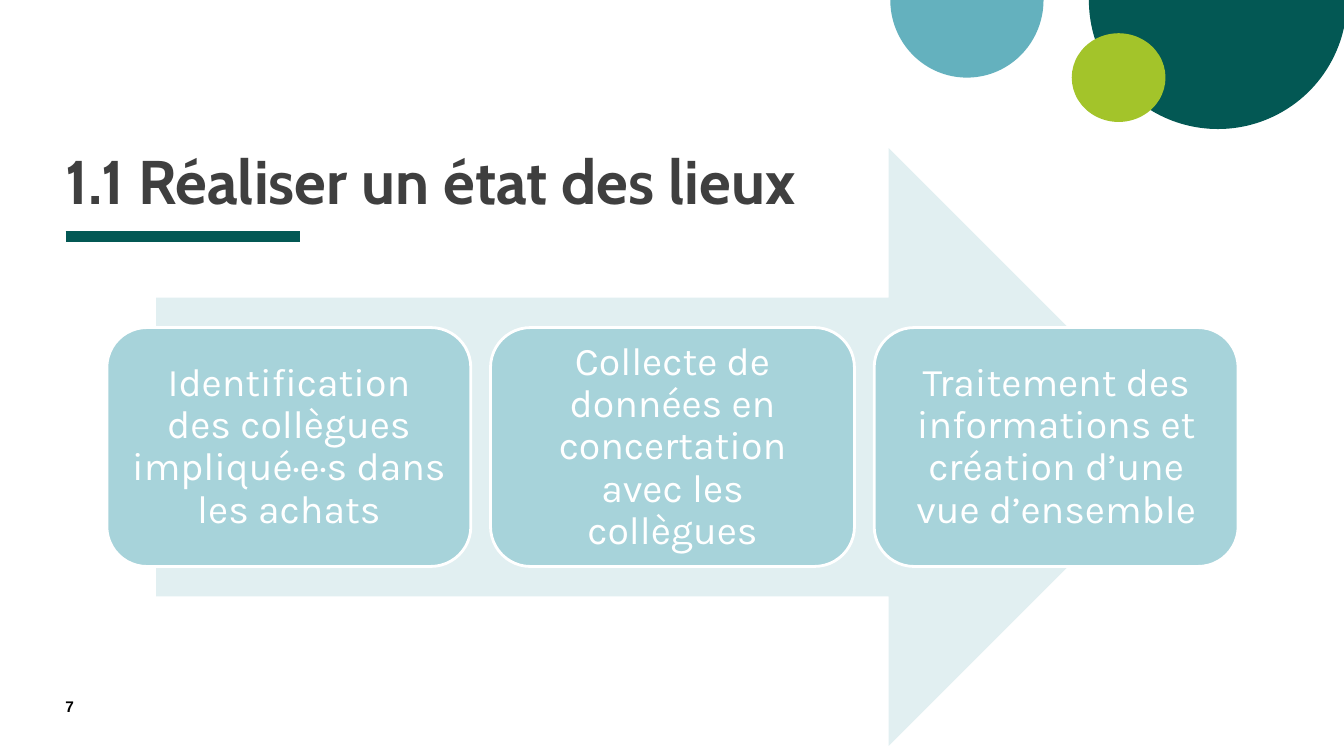
from lxml.etree import SubElement
from pptx import Presentation
from pptx.dml.color import RGBColor
from pptx.enum.shapes import MSO_CONNECTOR, MSO_SHAPE
from pptx.enum.text import MSO_ANCHOR, MSO_AUTO_SIZE, PP_ALIGN
from pptx.oxml.ns import qn
from pptx.util import Inches, Pt

TITLE = "1.1 Réaliser un état des lieux"
PAGE_NUMBER = "7"
STEPS = [
    "Identification des collègues impliqué·e·s dans les achats",
    "Collecte de données en concertation avec les collègues",
    "Traitement des informations et création d’une vue d’ensemble",
]

DARK_GREEN, BLUE, LIME = "035854", "64B1BE", "A3C42A"
PALE_BLUE, STEP_BLUE, WHITE = "E1EFF1", "A7D3DA", "FFFFFF"
GREY, BLACK = "3F3F3F", "000000"

WIDTH, HEIGHT = 13.33, 7.5
LEFT = 0.65
RULE_Y, RULE_LENGTH = 2.35, 2.33
ARROW = (1.55, 1.47, 10.23, 5.93)
STEP_LEFT, STEP_WIDTH, STEP_HEIGHT, STEP_GAP = 1.06, 3.61, 2.37, 0.195
STEP_TOP = ARROW[1] + (ARROW[3] - STEP_HEIGHT) / 2
HALF_TURN = 108  # pie angles count in units of 100000/60000 degree

# preset, (left, top, width, height), colour, adjustments
CIRCLES = [
    (MSO_SHAPE.PIE, (10.8, -1.28, 2.56, 2.56), DARK_GREEN, (0, HALF_TURN)),
    (MSO_SHAPE.PIE, (8.83, -0.77, 1.52, 1.54), BLUE, (0, HALF_TURN)),
    (MSO_SHAPE.OVAL, (10.63, 0.33, 0.93, 0.88), LIME, ()),
]


def colour(value):
    return RGBColor.from_string(value)


def add_filled(slide, preset, area, fill, adjustments=(), outline=None):
    shape = slide.shapes.add_shape(preset, *map(Inches, area))
    shape.shadow.inherit = False
    for index, value in enumerate(adjustments):
        shape.adjustments[index] = value
    shape.fill.solid()
    shape.fill.fore_color.rgb = colour(fill)
    if outline:
        shape.line.color.rgb = colour(outline)
        shape.line.width = Pt(2)
    else:
        shape.line.fill.background()
    return shape


def write(shape, text, font, size, ink, bold=False, margin=0, spacing=1.0,
          align=PP_ALIGN.LEFT, anchor=MSO_ANCHOR.TOP):
    frame = shape.text_frame
    frame.text = text
    frame.word_wrap = True
    frame.auto_size = MSO_AUTO_SIZE.NONE
    frame.vertical_anchor = anchor
    frame.margin_left = frame.margin_right = Inches(margin)
    frame.margin_top = frame.margin_bottom = Inches(margin)
    para = frame.paragraphs[0]
    para.alignment = align
    para.line_spacing = spacing
    span = para.runs[0].font
    span.name, span.size, span.bold = font, Pt(size), bold
    span.color.rgb = colour(ink)


def add_rule(slide):
    rule = slide.shapes.add_connector(
        MSO_CONNECTOR.STRAIGHT, Inches(LEFT), Inches(RULE_Y),
        Inches(LEFT + RULE_LENGTH), Inches(RULE_Y))
    rule.line.color.rgb = colour(DARK_GREEN)
    rule.line.width = Pt(8)
    SubElement(rule._element.spPr, qn("a:effectLst"))


def add_title(slide):
    title = slide.shapes.title
    title.left, title.top = Inches(LEFT), Inches(0.41)
    title.width, title.height = Inches(7.42), Inches(1.74)
    write(title, TITLE, "Cabin", 44, GREY, bold=True, spacing=0.8,
          anchor=MSO_ANCHOR.BOTTOM)


def add_steps(slide):
    add_filled(slide, MSO_SHAPE.RIGHT_ARROW, ARROW, PALE_BLUE, (0.5, 0.5))
    for column, text in enumerate(STEPS):
        left = STEP_LEFT + column * (STEP_WIDTH + STEP_GAP)
        box = add_filled(slide, MSO_SHAPE.ROUNDED_RECTANGLE,
                         (left, STEP_TOP, STEP_WIDTH, STEP_HEIGHT),
                         STEP_BLUE, (0.167,), WHITE)
        write(box, text, "Karla", 28, WHITE, margin=0.13, spacing=0.9,
              align=PP_ALIGN.CENTER, anchor=MSO_ANCHOR.MIDDLE)


def main():
    deck = Presentation()
    deck.slide_width, deck.slide_height = Inches(WIDTH), Inches(HEIGHT)
    slide = deck.slides.add_slide(deck.slide_layouts.get_by_name("Title Only"))
    for circle in CIRCLES:
        add_filled(slide, *circle)
    add_rule(slide)
    add_title(slide)
    number = slide.shapes.add_textbox(
        *map(Inches, (LEFT, 6.92, 0.57, 0.27)))
    write(number, PAGE_NUMBER, "Arial", 11, BLACK, bold=True)
    add_steps(slide)
    deck.save("out.pptx")


if __name__ == "__main__":
    main()
